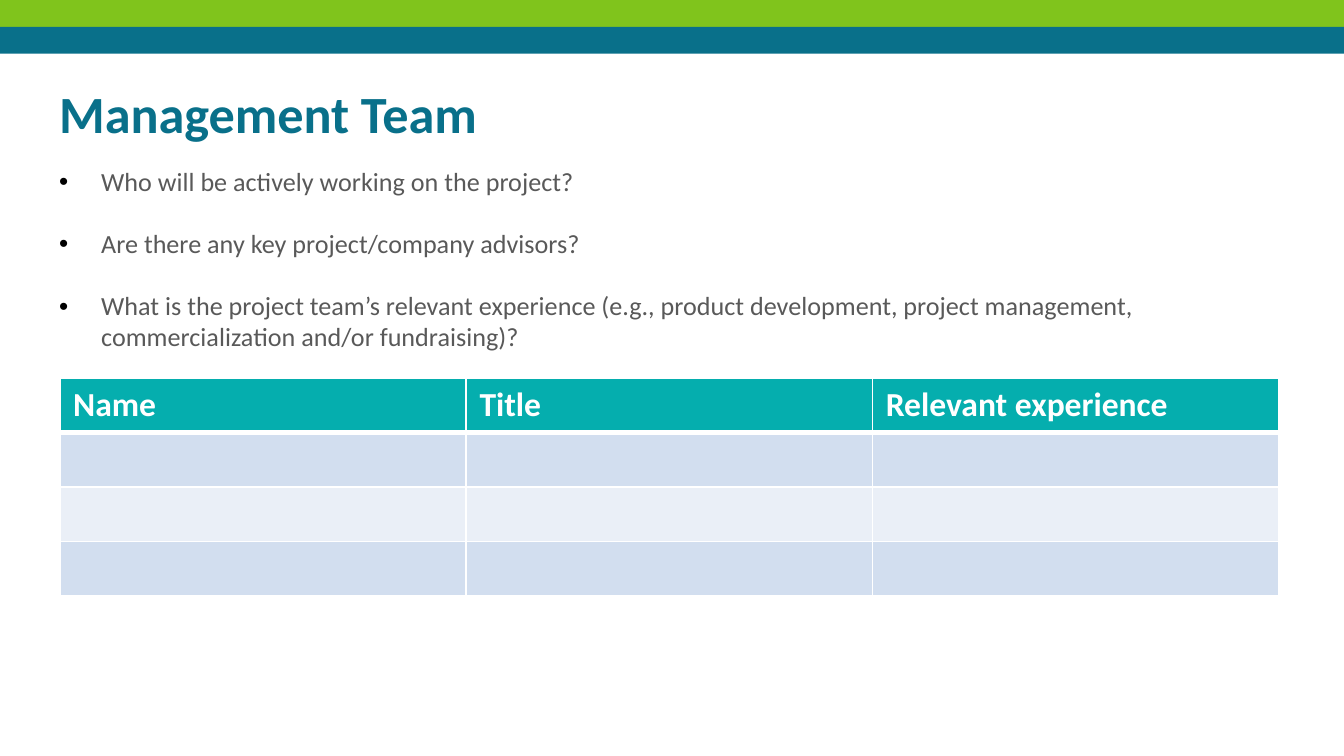
import pptx
import pptx.util
import pptx.dml.color
import pptx.enum.shapes
import pptx.enum.text
import pptx.oxml
import pptx.oxml.ns

Pt = pptx.util.Pt
ANCHOR = pptx.enum.text.MSO_ANCHOR
ALIGN = pptx.enum.text.PP_ALIGN

HEADING = "Management Team"
QUESTIONS = [
    "Who will be actively working on the project?",
    "Are there any key project/company advisors?",
    "What is the project team’s relevant experience (e.g., product development, "
    "project management, commercialization and/or fundraising)?",
]
TEAM_COLUMNS = ["Name", "Title", "Relevant experience"]
TEAM_ROW_FILLS = ["05AEAE", "D2DEEF", "EAEFF7", "D2DEEF"]
BAND_FILLS = ["80C41C", "09708A"]

SLIDE_WIDTH, SLIDE_HEIGHT = 720, 405
BAND_HEIGHT = 14.4
TITLE_BOX = (24.5, 35.3, 671, 45.4)
QUESTIONS_BOX = (24.5, 85.7, 668, 271.4)
TABLE_LEFT, TABLE_TOP = 32, 202.6
COLUMN_WIDTH, ROW_HEIGHT = 217.7, 29.1
INDENT = 22.5

HEADING_FONT = {"name": "Calibri", "size": Pt(28), "bold": True}
QUESTION_FONT = {"name": "Calibri", "size": Pt(14), "bold": False}
COLUMN_FONT = {"name": "Calibri", "size": Pt(18), "bold": True}
HEADING_FRAME = {"vertical_anchor": ANCHOR.TOP, "word_wrap": True,
                 "auto_size": pptx.enum.text.MSO_AUTO_SIZE.NONE,
                 "margin_left": Pt(7.2), "margin_right": Pt(7.2),
                 "margin_top": Pt(8), "margin_bottom": Pt(7.2)}
QUESTION_FRAME = {**HEADING_FRAME, "margin_top": Pt(3.6), "margin_bottom": Pt(3.6)}


def apply(target, values):
    for key, value in values.items():
        setattr(target, key, value)


def paint(color_owner, hex_color):
    """Fill a FillFormat, or colour a Font, with a solid colour."""
    if hasattr(color_owner, "solid"):
        color_owner.solid()
        color_owner.fore_color.rgb = pptx.dml.color.RGBColor.from_string(hex_color)
    else:
        color_owner.color.rgb = pptx.dml.color.RGBColor.from_string(hex_color)


def write(paragraph, words, font, hex_color):
    run = paragraph.add_run()
    run.text = words
    apply(run.font, font)
    paint(run.font, hex_color)


def place(placeholder, box, frame):
    apply(placeholder, dict(zip(("left", "top", "width", "height"), map(Pt, box))))
    apply(placeholder.text_frame, frame)


def xml(tag, attributes="", inner=""):
    namespace = pptx.oxml.ns.nsdecls("a")
    return pptx.oxml.parse_xml(f"<a:{tag} {namespace} {attributes}>{inner}</a:{tag}>")


def add_bullet(paragraph):
    properties = paragraph._p.get_or_add_pPr()
    properties.set("marL", str(Pt(INDENT)))
    properties.set("indent", str(-Pt(INDENT)))
    properties.append(xml("buClr", inner='<a:srgbClr val="000000"/>'))
    properties.append(xml("buFont", 'typeface="Arial"'))
    properties.append(xml("buChar", 'char="•"'))


def add_borders(cell, widths):
    """Draw white borders; widths maps each side (L, R, T, B) to points."""
    properties = cell._tc.get_or_add_tcPr()
    line = '<a:solidFill><a:srgbClr val="FFFFFF"/></a:solidFill>'
    for position, (side, width) in enumerate(widths.items()):
        properties.insert(position, xml(f"ln{side}", f'w="{Pt(width)}"', line))


deck = pptx.Presentation()
deck.slide_width, deck.slide_height = Pt(SLIDE_WIDTH), Pt(SLIDE_HEIGHT)
slide = deck.slides.add_slide(deck.slide_layouts[1])
title, body = slide.placeholders

for index, band_fill in enumerate(BAND_FILLS):
    band = slide.shapes.add_shape(
        pptx.enum.shapes.MSO_SHAPE.RECTANGLE,
        0, Pt(index * BAND_HEIGHT), Pt(SLIDE_WIDTH), Pt(BAND_HEIGHT))
    band.shadow.inherit = False
    paint(band.fill, band_fill)
    band.line.fill.background()

place(title, TITLE_BOX, HEADING_FRAME)
heading = title.text_frame.paragraphs[0]
heading.alignment = ALIGN.LEFT
write(heading, HEADING, HEADING_FONT, "09708A")

place(body, QUESTIONS_BOX, QUESTION_FRAME)
for index, question in enumerate(QUESTIONS):
    paragraph = body.text_frame.add_paragraph() if index else body.text_frame.paragraphs[0]
    add_bullet(paragraph)
    apply(paragraph, {"alignment": ALIGN.LEFT, "line_spacing": 0.98,
                      "space_before": Pt(16.8 if index else 0), "space_after": Pt(0)})
    write(paragraph, question, QUESTION_FONT, "595959")

team = slide.shapes.add_table(
    len(TEAM_ROW_FILLS), len(TEAM_COLUMNS), Pt(TABLE_LEFT), Pt(TABLE_TOP),
    Pt(COLUMN_WIDTH * len(TEAM_COLUMNS)), Pt(ROW_HEIGHT * len(TEAM_ROW_FILLS))).table
for column in team.columns:
    column.width = Pt(COLUMN_WIDTH)
for row_index, row_fill in enumerate(TEAM_ROW_FILLS):
    team.rows[row_index].height = Pt(ROW_HEIGHT)
    for cell in team.rows[row_index].cells:
        paint(cell.fill, row_fill)
        add_borders(cell, {"L": 1, "R": 1, "T": 3 if row_index == 1 else 1,
                           "B": 3 if row_index == 0 else 1})
for cell, label in zip(team.rows[0].cells, TEAM_COLUMNS):
    write(cell.text_frame.paragraphs[0], label, COLUMN_FONT, "FFFFFF")

deck.save("out.pptx")
